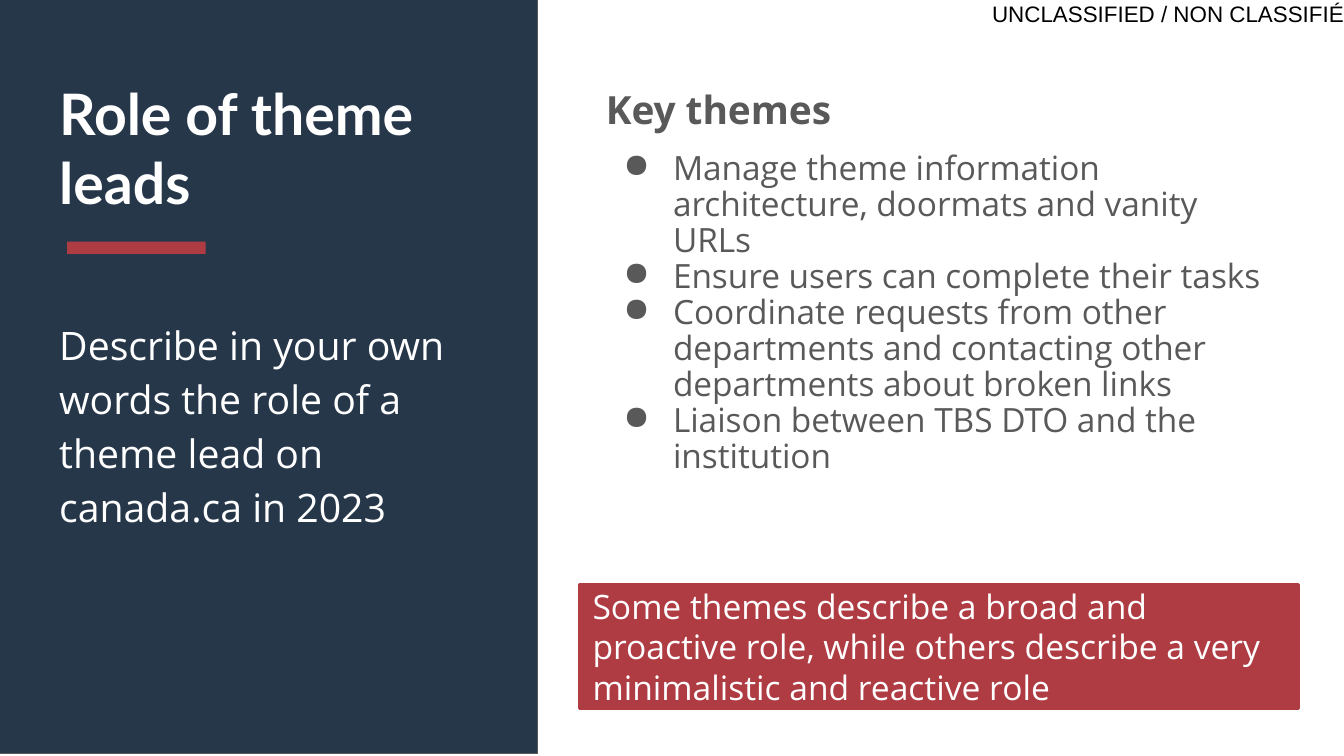
from lxml import etree
from pptx import Presentation
from pptx.dml.color import RGBColor
from pptx.enum.shapes import MSO_SHAPE as SHAPE
from pptx.enum.text import MSO_ANCHOR as ANCHOR, PP_ALIGN as ALIGN
from pptx.oxml.ns import qn
from pptx.util import Cm, Pt

NAVY, RED, GREY, WHITE, BLACK = "26374A", "AF3C43", "595959", "FFFFFF", "000000"
BODY_FONT = "Open Sans"
PAD = 0.25

THEMES = [
    "Manage theme information architecture, doormats and vanity URLs",
    "Ensure users can complete their tasks",
    "Coordinate requests from other departments and contacting other departments about broken links",
    "Liaison between TBS DTO and the institution",
]


def color(hex_value):
    return RGBColor.from_string(hex_value)


def add_rect(s, x, y, w, h, fill, line=None, line_width=0):
    sp = s.shapes.add_shape(SHAPE.RECTANGLE, Cm(x), Cm(y), Cm(w), Cm(h))
    sp.shadow.inherit = False
    sp.fill.solid()
    sp.fill.fore_color.rgb = color(fill)
    if line:
        sp.line.color.rgb = color(line)
        sp.line.width = Pt(line_width)
    else:
        sp.line.fill.background()
    return sp


def set_frame(sp, pad_x=PAD, pad_y=PAD, anchor=ANCHOR.TOP):
    tf = sp.text_frame
    tf.word_wrap = True
    tf.vertical_anchor = anchor
    tf.margin_left = tf.margin_right = Cm(pad_x)
    tf.margin_top = tf.margin_bottom = Cm(pad_y)
    return tf


def add_textbox(s, x, y, w, h, pad=PAD):
    return set_frame(s.shapes.add_textbox(Cm(x), Cm(y), Cm(w), Cm(h)), pad, pad)


def add_run(p, text, size, rgb, font=BODY_FONT, bold=False):
    p.alignment = ALIGN.LEFT
    r = p.add_run()
    r.text = text
    r.font.size = Pt(size)
    r.font.name = font
    r.font.bold = bold
    r.font.color.rgb = color(rgb)


def set_bullet(p, char, rgb, indent, hanging):
    pPr = p._p.get_or_add_pPr()
    pPr.set("marL", str(Cm(indent)))
    pPr.set("indent", str(-Cm(hanging)))
    bu_color = etree.SubElement(pPr, qn("a:buClr"))
    etree.SubElement(bu_color, qn("a:srgbClr")).set("val", rgb)
    etree.SubElement(pPr, qn("a:buChar")).set("char", char)


def add_marking(s, x, y, w, h):
    tf = add_textbox(s, x, y, w, h, pad=0)
    tf.word_wrap = False
    add_run(tf.paragraphs[0], "UNCLASSIFIED / NON CLASSIFIÉ", 12, BLACK, "Arial")


def add_side_panel(s, x, y, w, h):
    add_rect(s, x, y, w, h, NAVY, GREY, 0.75)
    # Title
    tf = add_textbox(s, x + 1, y + 1.27, 8.53, 3.1)
    add_run(tf.paragraphs[0], "Role of theme leads", 30.6, WHITE, "Lato", True)
    # Prompt
    tf = add_textbox(s, x + 1, y + 5.72, 8.66, 7.92)
    p = tf.paragraphs[0]
    p.line_spacing = 1.15
    add_run(p, "Describe in your own words the role of a theme lead on canada.ca in 2023", 21, WHITE)
    # Accent bar
    add_rect(s, x + 1.4, y + 4.6, 2.62, 0.23, RED)


def add_key_themes(s, x, y, w, h):
    tf = add_textbox(s, x, y, w, h)
    # Heading
    p = tf.paragraphs[0]
    p.line_spacing = 0.9
    add_run(p, "Key themes", 20.8, GREY, bold=True)
    # Bullets
    for i, theme in enumerate(THEMES):
        p = tf.add_paragraph()
        p.line_spacing = 0.9
        p.space_before = Pt(0 if i else 10)
        set_bullet(p, "●", GREY, 1.27, 0.94)
        add_run(p, theme, 17.9, GREY)


def add_callout(s, x, y, w, h):
    sp = add_rect(s, x, y, w, h, RED, RED, 1.5)
    tf = set_frame(sp, PAD, PAD / 2, ANCHOR.MIDDLE)
    add_run(tf.paragraphs[0], "Some themes describe a broad and proactive role, "
            "while others describe a very minimalistic and reactive role", 18, WHITE)


def main():
    prs = Presentation()
    prs.slide_width, prs.slide_height = Cm(25.4), Cm(14.29)
    s = prs.slides.add_slide(prs.slide_layouts[6])
    add_marking(s, 18.75, 0, 6.78, 0.51)
    add_side_panel(s, -0.13, -0.03, 10.29, 14.28)
    add_key_themes(s, 11.2, 1.47, 13.11, 7.92)
    add_callout(s, 10.95, 11.05, 13.59, 2.34)
    prs.save("out.pptx")


if __name__ == "__main__":
    main()
